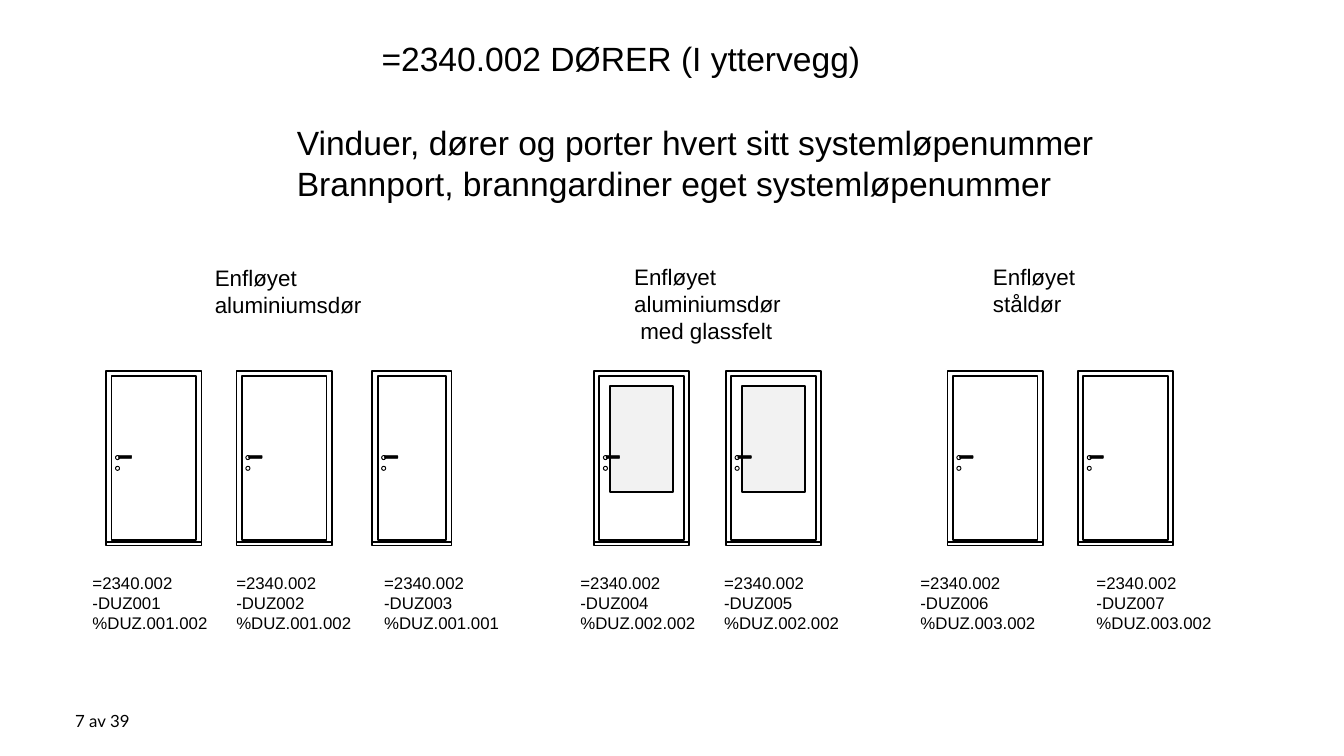
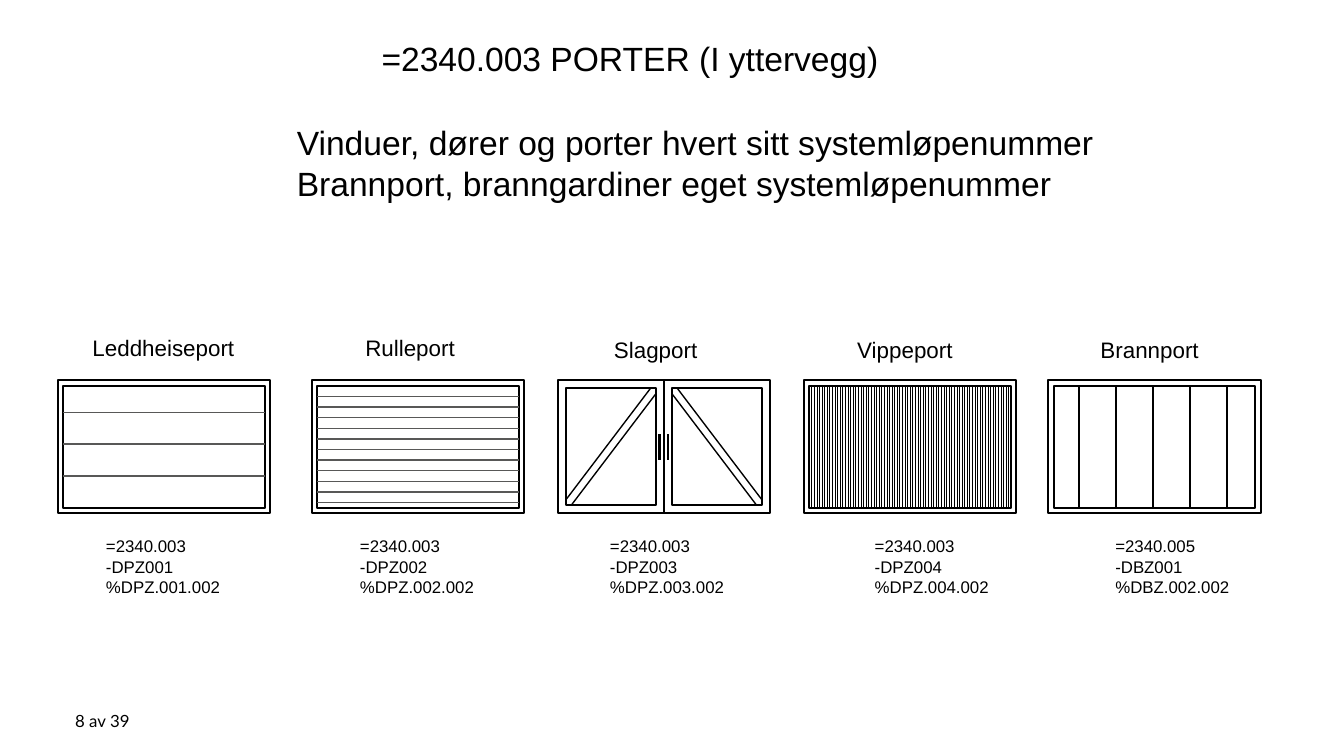
from dataclasses import dataclass

from lxml.etree import SubElement
from pptx import Presentation
from pptx.dml.color import RGBColor
from pptx.enum.dml import MSO_PATTERN
from pptx.enum.shapes import MSO_CONNECTOR, MSO_SHAPE
from pptx.enum.text import MSO_ANCHOR, MSO_AUTO_SIZE
from pptx.oxml.ns import qn
from pptx.shapes.autoshape import Shape
from pptx.shapes.connector import Connector
from pptx.slide import Slide
from pptx.util import Inches, Pt

COLORS = {"ink": "000000", "slat": "585857", "glass": "F2F2F2", "paper": "FFFFFF"}
FONT, FOOTER_FONT = "Arial", "Lato"
RULES = ["Vinduer, dører og porter hvert sitt systemløpenummer",
         "Brannport, branngardiner eget systemløpenummer"]
EDGE = 0.04

DOOR_TOP, DOOR_HEIGHT = 2.76, 1.3
DOOR_TAG_TOP = 4.21

GATE_TOP, GATE_WIDTH, GATE_HEIGHT = 2.83, 1.58, 0.99
PANEL_TOP, PANEL_WIDTH, PANEL_HEIGHT = GATE_TOP + EDGE, 1.5, 0.91
GATE_TAG_TOP = 3.94


@dataclass
class Heading:
    x: float
    y: float
    width: float
    lines: list[str]


@dataclass
class Door:
    x: float
    tag_x: float
    tag_width: float
    number: str
    kind: str
    width: float = 0.71
    glass: bool = False


@dataclass
class Gate:
    x: float
    tag_x: float
    tag_width: float
    tag: list[str]
    heading: Heading


DOOR_HEADINGS = [
    Heading(1.5, 1.92, 1.3, ["Enfløyet", "aluminiumsdør"]),
    Heading(4.62, 1.91, 1.3, ["Enfløyet", "aluminiumsdør", " med glassfelt"]),
    Heading(7.29, 1.91, 0.87, ["Enfløyet", "ståldør"]),
]
DOORS = [
    Door(0.79, 0.59, 1.1, "001", "001.002"),
    Door(1.76, 1.66, 1.1, "002", "001.002"),
    Door(2.77, 2.76, 1.15, "003", "001.001", width=0.59),
    Door(4.42, 4.22, 1.12, "004", "002.002", glass=True),
    Door(5.4, 5.29, 1.1, "005", "002.002", glass=True),
    Door(7.05, 6.75, 1.15, "006", "003.002"),
    Door(8.02, 8.06, 1.11, "007", "003.002"),
]

SECTIONAL = Gate(0.43, 0.69, 1.05, ["=2340.003", "-DPZ001", "%DPZ.001.002"],
                 Heading(0.59, 2.44, 1.26, ["Leddheiseport"]))
ROLLER = Gate(2.32, 2.58, 1.05, ["=2340.003", "-DPZ002", "%DPZ.002.002"],
              Heading(2.62, 2.44, 0.87, ["Rulleport"]))
SWING = Gate(4.15, 4.44, 1.08, ["=2340.003", "-DPZ003", "%DPZ.003.002"],
             Heading(4.47, 2.45, 0.83, ["Slagport"]))
TILT = Gate(5.98, 6.41, 1.11, ["=2340.003", "-DPZ004", "%DPZ.004.002"],
            Heading(6.28, 2.45, 0.92, ["Vippeport"]))
FIRE = Gate(7.8, 8.2, 1.05, ["=2340.005", "-DBZ001", "%DBZ.002.002"],
            Heading(8.09, 2.45, 0.94, ["Brannport"]))


def rgb(name: str) -> RGBColor:
    return RGBColor.from_string(COLORS[name])


def add_text(s: Slide, x: float, y: float, width: float, height: float,
             lines: list[str], size: float, font: str = FONT,
             wrap: bool = True) -> Shape:
    box = s.shapes.add_textbox(Inches(x), Inches(y), Inches(width), Inches(height))
    tf = box.text_frame
    tf.word_wrap = wrap
    tf.auto_size = MSO_AUTO_SIZE.SHAPE_TO_FIT_TEXT
    for i, line in enumerate(lines):
        p = tf.add_paragraph() if i else tf.paragraphs[0]
        r = p.add_run()
        r.text = line
        r.font.name = font
        r.font.size = Pt(size)
        r.font.color.rgb = rgb("ink")
    return box


def add_outline(s: Slide, x: float, y: float, width: float, height: float,
                fill: str | None = None, weight: float = 1,
                kind: MSO_SHAPE = MSO_SHAPE.RECTANGLE) -> Shape:
    sp = s.shapes.add_shape(kind, Inches(x), Inches(y), Inches(width), Inches(height))
    sp.shadow.inherit = False
    if fill:
        sp.fill.solid()
        sp.fill.fore_color.rgb = rgb(fill)
    else:
        sp.fill.background()
    sp.line.color.rgb = rgb("ink")
    sp.line.width = Pt(weight)
    return sp


def add_line(s: Slide, x1: float, y1: float, x2: float, y2: float,
             weight: float = 1, color: str = "ink") -> Connector:
    line = s.shapes.add_connector(MSO_CONNECTOR.STRAIGHT, Inches(x1), Inches(y1),
                                  Inches(x2), Inches(y2))
    line.line.color.rgb = rgb(color)
    line.line.width = Pt(weight)
    SubElement(line._element.spPr, qn("a:effectLst"))
    return line


def add_heading(s: Slide, heading: Heading) -> None:
    height = 0.1 + 0.2 * len(heading.lines)
    add_text(s, heading.x, heading.y, heading.width, height, heading.lines, 12,
             wrap=False)


def add_base_slide(prs: Presentation, title: str, page: str) -> Slide:
    """Add a blank slide with the title, the numbering rules and the footer."""
    s = prs.slides.add_slide(prs.slide_layouts[6])
    add_text(s, 2.74, 0.23, 4.18, 0.4, [title], 18)
    add_text(s, 2.11, 0.86, 6.58, 0.71, RULES, 18)
    footer = add_text(s, 0.56, 5.21, 1.9, 0.3, [page], 9, FOOTER_FONT)
    tf = footer.text_frame
    tf.auto_size = MSO_AUTO_SIZE.NONE
    tf.vertical_anchor = MSO_ANCHOR.MIDDLE
    tf.margin_left = 0
    return s


def draw_door(s: Slide, door: Door) -> None:
    x, y = door.x, DOOR_TOP
    if door.glass:
        add_outline(s, x + 0.12, y + 0.11, 0.47, 0.79, "glass")
    add_outline(s, x + EDGE, y + EDGE, door.width - 2 * EDGE, DOOR_HEIGHT - 2 * EDGE)
    add_line(s, x, y + 1.27, x + door.width, y + 1.27)
    for knob_y in (0.71, 0.63):
        add_outline(s, x + 0.07, y + knob_y, 0.03, 0.03, weight=0.5,
                    kind=MSO_SHAPE.OVAL)
    handle = add_outline(s, x + 0.13, y + 0.59, 0.02, 0.1, "ink", 0.25,
                         MSO_SHAPE.ROUND_2_SAME_RECTANGLE)
    handle.rotation = 90
    add_outline(s, x, y, door.width, DOOR_HEIGHT)
    tag = ["=2340.002", f"-DUZ{door.number}", f"%DUZ.{door.kind}"]
    add_text(s, door.tag_x, DOOR_TAG_TOP, door.tag_width, 0.56, tag, 9)


def draw_gate(s: Slide, gate: Gate) -> Shape:
    """Draw the frame and texts of a gate and return the frame."""
    add_heading(s, gate.heading)
    add_text(s, gate.tag_x, GATE_TAG_TOP, gate.tag_width, 0.56, gate.tag, 9)
    return add_outline(s, gate.x, GATE_TOP, GATE_WIDTH, GATE_HEIGHT)


def draw_panel(s: Slide, gate: Gate) -> Shape:
    return add_outline(s, gate.x + EDGE, PANEL_TOP, PANEL_WIDTH, PANEL_HEIGHT)


def draw_slats(s: Slide, gate: Gate, count: int, first: float, last: float,
               weight: float) -> None:
    left = gate.x + EDGE
    step = (last - first) / (count - 1)
    for i in range(count):
        y = first + i * step
        add_line(s, left, y, left + PANEL_WIDTH, y, weight, "slat")


def draw_swing_leaves(s: Slide, gate: Gate, frame: Shape) -> None:
    """Draw two mirrored leaves with braces, the centre line and the handles."""
    middle = gate.x + GATE_WIDTH / 2
    top, width, height = 2.89, 0.67, 0.87
    bottom = top + height
    for side in (-1, 1):
        inner = middle + side * 0.06
        outer = inner + side * width
        add_outline(s, min(inner, outer), top, width, height)
        add_line(s, inner, top + EDGE, outer - side * EDGE, bottom, 0.75)
        add_line(s, inner + side * EDGE, top, outer, bottom - EDGE, 0.75)
        handle_x = middle + side * 0.03
        add_line(s, handle_x, 3.42, handle_x, 3.23, 1.5)
    split = add_line(s, middle, GATE_TOP + GATE_HEIGHT, middle, GATE_TOP)
    split.begin_connect(frame, 2)
    split.end_connect(frame, 0)


def build_doors(prs: Presentation) -> None:
    s = add_base_slide(prs, "=2340.002 DØRER (I yttervegg)", "7 av 39")
    for heading in DOOR_HEADINGS:
        add_heading(s, heading)
    for door in DOORS:
        draw_door(s, door)


def build_gates(prs: Presentation) -> None:
    s = add_base_slide(prs, "=2340.003 PORTER (I yttervegg)", "8 av 39")
    frames = [draw_gate(s, gate) for gate in (SECTIONAL, ROLLER, SWING, TILT, FIRE)]
    draw_panel(s, SECTIONAL)
    draw_slats(s, SECTIONAL, 3, 3.07, 3.54, 1)
    draw_panel(s, ROLLER)
    draw_slats(s, ROLLER, 11, 2.95, 3.74, 0.75)
    draw_swing_leaves(s, SWING, frames[2])
    fill = draw_panel(s, TILT).fill
    fill.patterned()
    fill.pattern = MSO_PATTERN.LIGHT_VERTICAL
    fill.fore_color.rgb = rgb("ink")
    fill.back_color.rgb = rgb("paper")
    draw_panel(s, FIRE)
    first, last, count = 8.03, 9.13, 5
    for i in range(count):
        x = first + i * (last - first) / (count - 1)
        add_line(s, x, PANEL_TOP + PANEL_HEIGHT, x, PANEL_TOP)


def main() -> None:
    prs = Presentation()
    prs.slide_width = Inches(10)
    prs.slide_height = prs.slide_width * 9 // 16
    build_doors(prs)
    build_gates(prs)
    prs.save("out.pptx")


if __name__ == "__main__":
    main()
